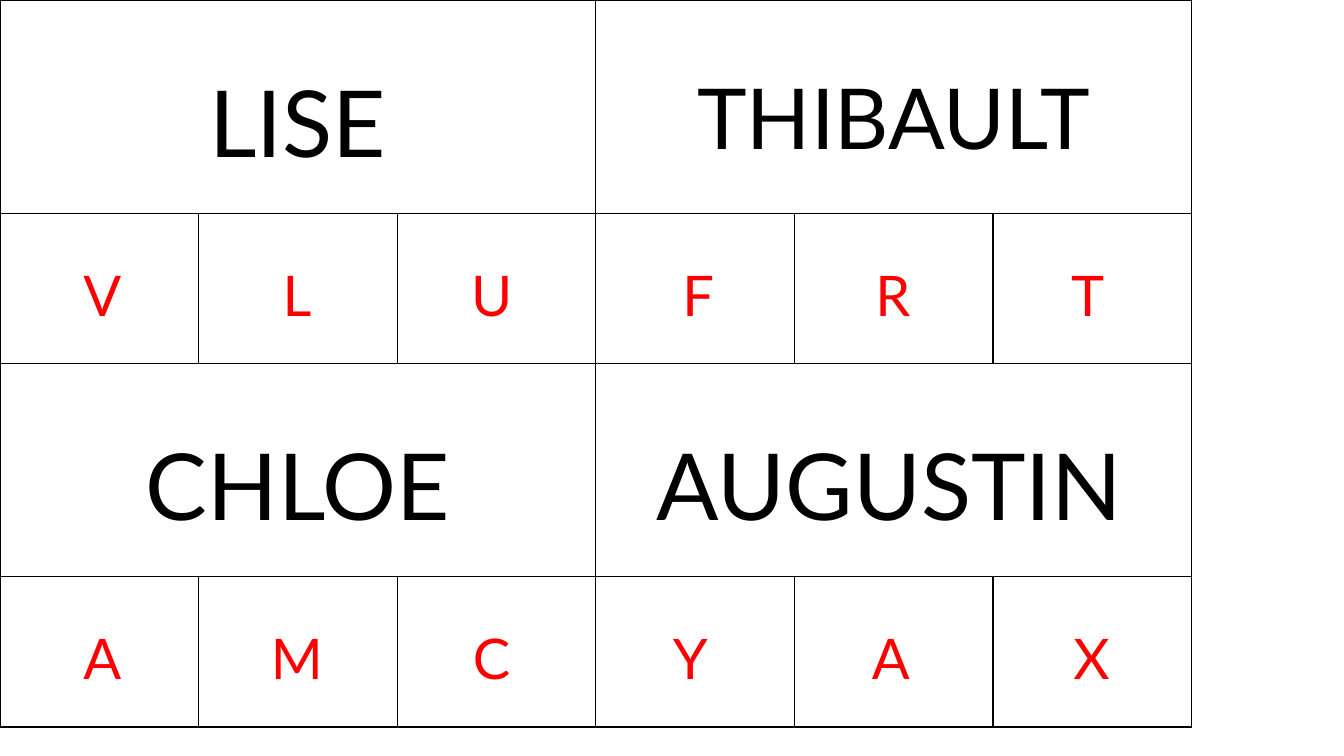
"""Build a slide of four name cards, each with three letters below the name."""
from dataclasses import dataclass

from lxml import etree
from pptx import Presentation
from pptx import util as u
from pptx.dml.color import RGBColor
from pptx.enum import text
from pptx.oxml import ns

BLACK = RGBColor(0x00, 0x00, 0x00)
RED = RGBColor(0xFF, 0x00, 0x00)

COLUMN = u.Inches(1.97)
ROW = u.Inches(1.49)
CARD_COLUMNS = 3
NAME_ROWS = 1.42
CARD_ROWS = NAME_ROWS + 1

NAME_TOP = 0.4
LETTER_TOP = 1.7
LETTER_WIDTH = 0.67
LETTER_HEIGHT = 0.52


@dataclass(frozen=True)
class Card:
    """A name card; widths and offsets are in columns, heights in rows."""

    name: str
    letters: str
    across: int
    down: int
    size: int = 66
    name_width: float = 1.82
    name_height: float = 0.81
    name_shift: float = 0
    letter_left: float = 0.18
    letter_step: float = 0.98

    @property
    def left(self) -> float:
        """Return the left edge in columns."""
        return self.across * CARD_COLUMNS

    @property
    def top(self) -> float:
        """Return the top edge in rows."""
        return self.down * CARD_ROWS


CARDS = [
    Card("LISE", "VLU", 0, 0),
    Card("THIBAULT", "FRT", 1, 0, size=60, name_width=2.37, name_height=0.74),
    Card("CHLOE", "AMC", 0, 1),
    Card("AUGUSTIN", "YAX", 1, 1, name_width=2.62, name_shift=-0.02,
         letter_left=0.14, letter_step=1.01),
]


def place(left: float, top: float, width: float, height: float) -> list[u.Emu]:
    """Turn columns and rows into slide lengths."""
    return [u.Emu(round(length)) for length in
            (left * COLUMN, top * ROW, width * COLUMN, height * ROW)]


def format_cell(cell) -> None:
    """Give a cell thin black borders and no fill."""
    properties = cell._tc.get_or_add_tcPr()
    for side in ("lnL", "lnR", "lnT", "lnB"):
        line = etree.SubElement(properties, ns.qn(f"a:{side}"), w=str(u.Pt(1)))
        fill = etree.SubElement(line, ns.qn("a:solidFill"))
        etree.SubElement(fill, ns.qn("a:srgbClr"), val=str(BLACK))
    cell.fill.background()


def add_grid(page, card: Card) -> None:
    """Draw the table of a card: a merged name row over three letter cells."""
    frame = page.shapes.add_table(
        2, CARD_COLUMNS, *place(card.left, card.top, CARD_COLUMNS, CARD_ROWS))
    table = frame.table
    table.first_row = table.horz_banding = False
    for column in table.columns:
        column.width = COLUMN
    for row, share in zip(table.rows, (NAME_ROWS, 1)):
        row.height = u.Emu(round(share * ROW))
    for cell in table.iter_cells():
        format_cell(cell)
    table.cell(0, 0).merge(table.cell(0, CARD_COLUMNS - 1))


def add_label(page, label: str, area: list[u.Emu], size: int, color: RGBColor) -> None:
    """Write one centred label in a text box."""
    box = page.shapes.add_textbox(*area)
    frame_format = {"word_wrap": True, "auto_size": text.MSO_AUTO_SIZE.SHAPE_TO_FIT_TEXT}
    for key, value in frame_format.items():
        setattr(box.text_frame, key, value)
    para = box.text_frame.paragraphs[0]
    para.alignment = text.PP_ALIGN.CENTER
    span = para.add_run()
    span.text = label
    for key, value in {"name": "Lato", "size": u.Pt(size)}.items():
        setattr(span.font, key, value)
    span.font.color.rgb = color


def add_labels(page, card: Card) -> None:
    """Write the name and the letters of a card."""
    name_left = card.left + (CARD_COLUMNS - card.name_width) / 2 + card.name_shift
    area = place(name_left, card.top + NAME_TOP, card.name_width, card.name_height)
    add_label(page, card.name, area, card.size, BLACK)
    for index, letter in enumerate(card.letters):
        left = card.left + card.letter_left + index * card.letter_step
        area = place(left, card.top + LETTER_TOP, LETTER_WIDTH, LETTER_HEIGHT)
        add_label(page, letter, area, 40, RED)


def main() -> None:
    """Build and save the deck."""
    deck = Presentation()
    deck.slide_width, deck.slide_height = u.Inches(13.33), u.Inches(7.5)
    page = deck.slides.add_slide(deck.slide_layouts[6])
    for draw in (add_grid, add_labels):
        for card in CARDS:
            draw(page, card)
    deck.save("out.pptx")


if __name__ == "__main__":
    main()
